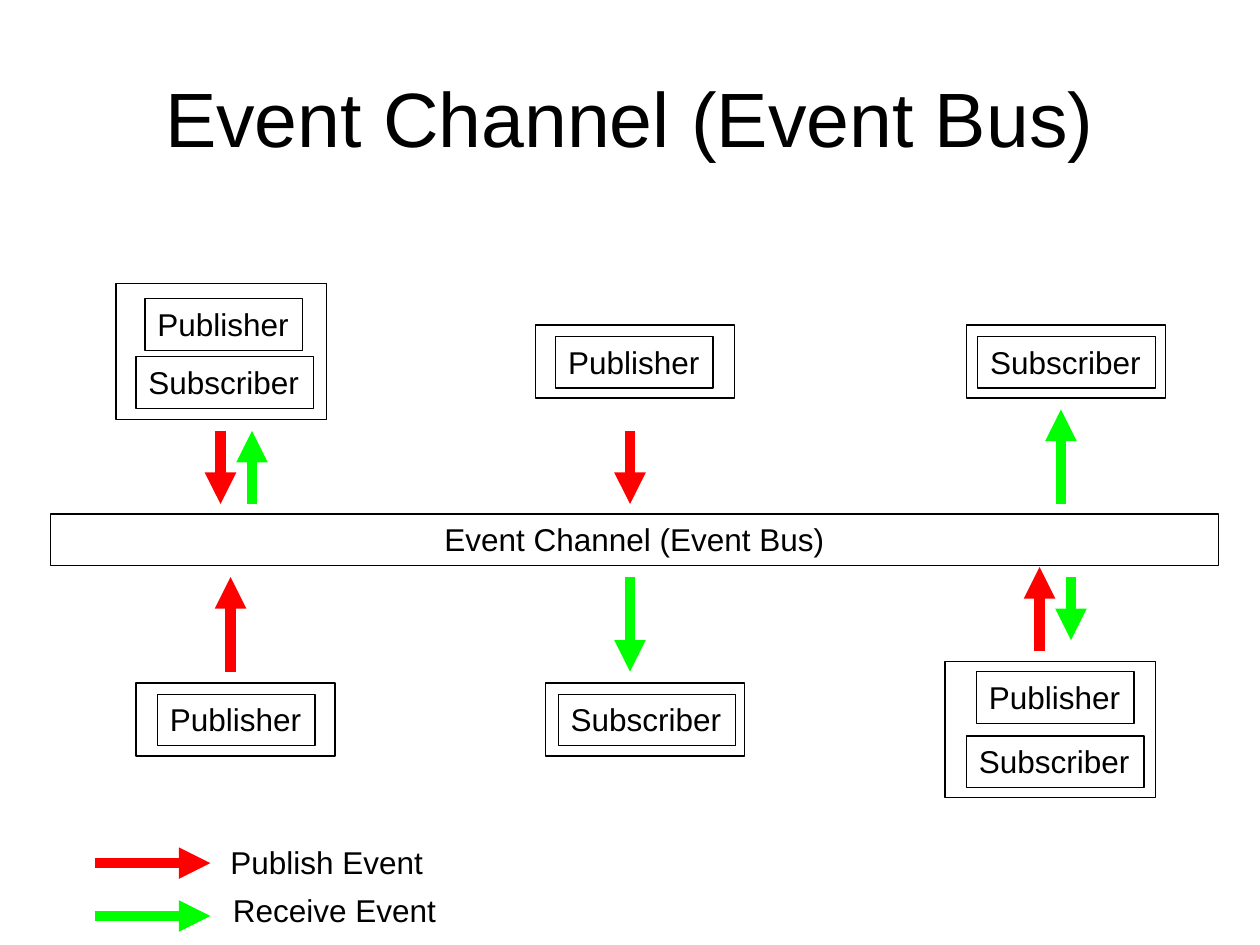
"""Build the Event Channel (Event Bus) slide."""
from lxml import etree
from pptx import Presentation
from pptx.dml.color import RGBColor
from pptx.enum.shapes import MSO_CONNECTOR, MSO_SHAPE
from pptx.enum.text import MSO_ANCHOR, PP_ALIGN
from pptx.oxml.ns import qn
from pptx.util import Inches, Pt

RECTANGLE, STRAIGHT = MSO_SHAPE.RECTANGLE, MSO_CONNECTOR.STRAIGHT
LEFT, CENTER = PP_ALIGN.LEFT, PP_ALIGN.CENTER
MIDDLE, TOP = MSO_ANCHOR.MIDDLE, MSO_ANCHOR.TOP
BLACK, PUBLISH, RECEIVE = "000000", "FF0000", "00FF00"

TITLE = "Event Channel (Event Bus)"
TITLE_AREA = (0.5, 0.3, 9, 1.25)
BUS_AREA = (0.4, 4.08, 9.27, 0.41)
SINGLE, DOUBLE = (1.58, 0.58), (1.67, 1.08)
ROLE_WIDTHS = {"Publisher": 1.25, "Subscriber": 1.41}
ROLE_HEIGHT = 0.41

COMPONENTS = [
    ((0.92, 2.25), DOUBLE, [("Publisher", 1.15, 2.37), ("Subscriber", 1.08, 2.83)]),
    ((4.25, 2.58), SINGLE, [("Publisher", 4.41, 2.67)]),
    ((7.67, 2.58), SINGLE, [("Subscriber", 7.76, 2.67)]),
    ((1.08, 5.42), SINGLE, [("Publisher", 1.25, 5.51)]),
    ((4.33, 5.42), SINGLE, [("Subscriber", 4.43, 5.51)]),
    ((7.5, 5.25), DOUBLE, [("Publisher", 7.75, 5.33), ("Subscriber", 7.67, 5.84)]),
]
EVENTS = [
    (PUBLISH, 1.75, 3.42, 4),
    (RECEIVE, 2, 4, 3.42),
    (PUBLISH, 5, 3.42, 4),
    (RECEIVE, 8.42, 4, 3.25),
    (PUBLISH, 1.83, 5.33, 4.58),
    (RECEIVE, 5, 4.58, 5.33),
    (PUBLISH, 8.25, 5.17, 4.5),
    (RECEIVE, 8.5, 4.58, 5.08),
]
LEGEND = [
    ("Publish Event", PUBLISH, 6.85, (1.73, 6.64, 1.73, 0.4)),
    ("Receive Event", RECEIVE, 7.27, (1.75, 7.02, 1.81, 0.4)),
]
LEGEND_SPAN = (0.75, 1.67)


def color(value):
    return RGBColor.from_string(value)


def write(shape, text, size=18, align=LEFT, anchor=TOP, wrap=False):
    frame = shape.text_frame
    frame.word_wrap = wrap
    frame.vertical_anchor = anchor
    paragraph = frame.paragraphs[0]
    paragraph.text = text
    paragraph.alignment = align
    paragraph.font.name = "Arial"
    paragraph.font.size = Pt(size)
    paragraph.font.color.rgb = color(BLACK)


def add_box(slide, area):
    box = slide.shapes.add_shape(RECTANGLE, *map(Inches, area))
    box.shadow.inherit = False
    box.fill.background()
    box.line.color.rgb = color(BLACK)
    box.line.width = Pt(0.75)
    return box


def add_label(slide, area, text, **style):
    write(slide.shapes.add_textbox(*map(Inches, area)), text, **style)


def add_arrow(slide, tone, start, end):
    arrow = slide.shapes.add_connector(STRAIGHT, *map(Inches, start + end))
    arrow.line.color.rgb = color(tone)
    arrow.line.width = Pt(6)
    etree.SubElement(arrow.line._get_or_add_ln(), qn("a:tailEnd"), type="triangle")
    etree.SubElement(arrow._element.spPr, qn("a:effectLst"))


def main():
    deck = Presentation()
    deck.slide_width, deck.slide_height = Inches(10), Inches(7.5)
    slide = deck.slides.add_slide(deck.slide_layouts[6])

    add_label(slide, TITLE_AREA, TITLE, size=44, align=CENTER, anchor=MIDDLE, wrap=True)
    for corner, size, roles in COMPONENTS:
        add_box(slide, corner + size)
        for role, left, top in roles:
            role_box = add_box(slide, (left, top, ROLE_WIDTHS[role], ROLE_HEIGHT))
            write(role_box, role)
    write(add_box(slide, BUS_AREA), TITLE, align=CENTER, wrap=True)

    for tone, x, start, end in EVENTS:
        add_arrow(slide, tone, (x, start), (x, end))
    for meaning, tone, y, area in LEGEND:
        start, end = LEGEND_SPAN
        add_arrow(slide, tone, (start, y), (end, y))
        add_label(slide, area, meaning)

    deck.save("out.pptx")


if __name__ == "__main__":
    main()
